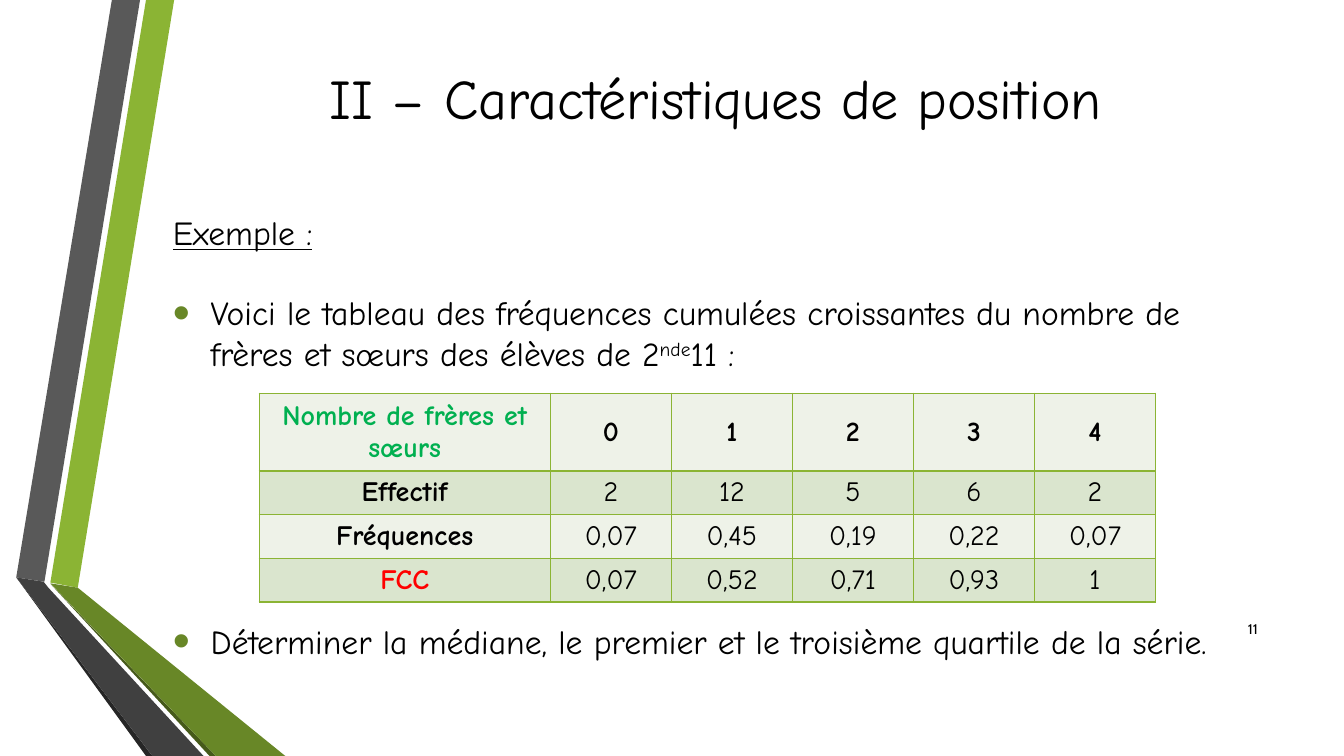
from dataclasses import dataclass, field
from typing import Any

from lxml.etree import SubElement
from pptx import Presentation
from pptx.dml.color import RGBColor
from pptx.enum.text import MSO_ANCHOR, MSO_AUTO_SIZE, PP_ALIGN
from pptx.oxml.ns import qn
from pptx.util import Cm, Pt

COLOURS = {
    "black": "000000",
    "red": "FF0000",
    "emphasis": "00B050",
    "lime": "8BB434",
    "olive": "688727",
    "moss": "465A1A",
    "grey": "595959",
    "charcoal": "404040",
    "ink": "262626",
    "light_row": "EEF2E8",
    "dark_row": "DAE5CE",
}
BODY_FONT = "Comic Neue"
NUMBER_FONT = "Cabin"


@dataclass
class Ribbon:
    colour: str
    points: list[tuple[float, float]]


@dataclass
class Span:
    text: str
    size: float = 24
    colour: str = "black"
    name: str = BODY_FONT
    raised: bool = False
    formats: dict[str, Any] = field(default_factory=dict)


@dataclass
class TextBlock:
    left: float
    top: float
    width: float
    height: float
    spans: list[Span]
    bulleted: bool = False
    align: Any = PP_ALIGN.LEFT
    anchor: Any = MSO_ANCHOR.TOP


@dataclass
class TableRow:
    height: float
    fill: str
    label_colour: str
    bold_values: bool
    texts: list[str]


RIBBONS = [
    Ribbon("lime", [(1.27, 14.68), (1.96, 14.81), (4.39, 0), (3.68, 0)]),
    Ribbon("grey", [(3.53, 0), (2.82, 0), (0.41, 14.55), (1.12, 14.66)]),
    Ribbon("ink", [(0.41, 14.55), (3.68, 19.05), (3.84, 19.05)]),
    Ribbon("moss", [(1.27, 14.71), (5.28, 19.05), (5.44, 19.05)]),
    Ribbon("olive", [(1.27, 14.7), (5.44, 19.05), (7.19, 19.05), (1.96, 14.81)]),
    Ribbon("charcoal", [(5.13, 19.05), (1.22, 14.81), (1.1, 14.66), (0.41, 14.55), (3.84, 19.05)]),
]

TITLE = TextBlock(
    4.11, 0, 27.84, 4.88,
    [Span("II – Caractéristiques de position", 40)],
    align=PP_ALIGN.CENTER, anchor=MSO_ANCHOR.MIDDLE,
)

TEXT_BLOCKS = [
    TextBlock(
        30.43, 15.34, 1.52, 1.02, [Span("11", 10, name=NUMBER_FONT)],
        align=PP_ALIGN.RIGHT, anchor=MSO_ANCHOR.MIDDLE,
    ),
    TextBlock(4.11, 5.21, 28.24, 1.27, [Span("Exemple :", formats={"underline": True})]),
    TextBlock(
        4.11, 7.24, 27.3, 2.31,
        [
            Span(
                "Voici le tableau des fréquences cumulées croissantes du nombre de "
                "frères et sœurs des élèves de 2"
            ),
            Span("nde", raised=True),
            Span("11 :"),
        ],
        bulleted=True,
    ),
    TextBlock(
        4.11, 15.52, 27.3, 2.31,
        [Span("Déterminer la médiane, le premier et le troisième quartile de la série.")],
        bulleted=True,
    ),
]

COLUMN_WIDTHS = [7.34] + [3.05] * 5
TABLE_ROWS = [
    TableRow(1.96, "light_row", "emphasis", True, ["Nombre de frères et sœurs", "0", "1", "2", "3", "4"]),
    TableRow(1.1, "dark_row", "black", False, ["Effectif", "2", "12", "5", "6", "2"]),
    TableRow(1.1, "light_row", "black", False, ["Fréquences", "0,07", "0,45", "0,19", "0,22", "0,07"]),
    TableRow(1.1, "dark_row", "red", False, ["FCC", "0,07", "0,52", "0,71", "0,93", "1"]),
]


def rgb(colour: str) -> RGBColor:
    return RGBColor.from_string(COLOURS[colour])


def apply(target: Any, formats: dict[str, Any]) -> None:
    for attribute, value in formats.items():
        setattr(target, attribute, value)


def write_spans(para: Any, spans: list[Span], align: Any) -> None:
    para.alignment = align
    for span in spans:
        run = para.add_run()
        run.text = span.text
        apply(run.font, {"name": span.name, "size": Pt(span.size), **span.formats})
        run.font.color.rgb = rgb(span.colour)
        if span.raised:
            run.font._element.set("baseline", "30000")


def add_bullet(para: Any) -> None:
    properties = para._p.get_or_add_pPr()
    properties.set("marL", str(Cm(0.95)))
    properties.set("indent", str(-Cm(0.95)))
    colour = SubElement(properties, qn("a:buClr"))
    SubElement(colour, qn("a:srgbClr"), val=COLOURS["olive"])
    SubElement(properties, qn("a:buSzPct"), val="145000")
    SubElement(properties, qn("a:buFont"), typeface="Arial")
    SubElement(properties, qn("a:buChar"), char="•")


def fill_block(box: Any, block: TextBlock) -> None:
    apply(box, {name: Cm(getattr(block, name)) for name in ("left", "top", "width", "height")})
    frame = box.text_frame
    apply(frame, {
        "word_wrap": True,
        "auto_size": MSO_AUTO_SIZE.NONE,
        "vertical_anchor": block.anchor,
    })
    para = frame.paragraphs[0]
    write_spans(para, block.spans, block.align)
    if block.bulleted:
        add_bullet(para)


def draw_ribbon(page: Any, ribbon: Ribbon) -> None:
    corners = [(Cm(x), Cm(y)) for x, y in ribbon.points]
    builder = page.shapes.build_freeform(*corners[0])
    builder.add_line_segments(corners[1:], close=True)
    shape = builder.convert_to_shape()
    shape.shadow.inherit = False
    shape.fill.solid()
    shape.fill.fore_color.rgb = rgb(ribbon.colour)
    shape.line.fill.background()


def add_borders(cell: Any) -> None:
    properties = cell._tc.get_or_add_tcPr()
    for side in ("lnL", "lnR", "lnT", "lnB"):
        line = SubElement(properties, qn(f"a:{side}"), w=str(Pt(1)))
        fill = SubElement(line, qn("a:solidFill"))
        SubElement(fill, qn("a:srgbClr"), val=COLOURS["lime"])


def draw_table(page: Any, rows: list[TableRow]) -> None:
    height = sum(row.height for row in rows)
    table = page.shapes.add_table(
        len(rows), len(COLUMN_WIDTHS), Cm(6.53), Cm(9.91), Cm(sum(COLUMN_WIDTHS)), Cm(height)
    ).table
    apply(table, {"first_row": False, "horz_banding": False})
    for column, width in zip(table.columns, COLUMN_WIDTHS):
        column.width = Cm(width)
    for table_row, row in zip(table.rows, rows):
        table_row.height = Cm(row.height)
        for index, (cell, text) in enumerate(zip(table_row.cells, row.texts)):
            is_label = index == 0
            add_borders(cell)
            cell.fill.solid()
            cell.fill.fore_color.rgb = rgb(row.fill)
            cell.vertical_anchor = MSO_ANCHOR.MIDDLE
            colour = row.label_colour if is_label else "black"
            span = Span(text, 20, colour, formats={"bold": is_label or row.bold_values})
            write_spans(cell.text_frame.paragraphs[0], [span], PP_ALIGN.CENTER)


def main() -> None:
    deck = Presentation()
    apply(deck, {"slide_width": Cm(33.87), "slide_height": Cm(19.05)})
    page = deck.slides.add_slide(deck.slide_layouts.get_by_name("Title Only"))
    for ribbon in RIBBONS:
        draw_ribbon(page, ribbon)
    fill_block(page.shapes.title, TITLE)
    for block in TEXT_BLOCKS:
        fill_block(page.shapes.add_textbox(0, 0, 0, 0), block)
    draw_table(page, TABLE_ROWS)
    deck.save("out.pptx")


if __name__ == "__main__":
    main()
